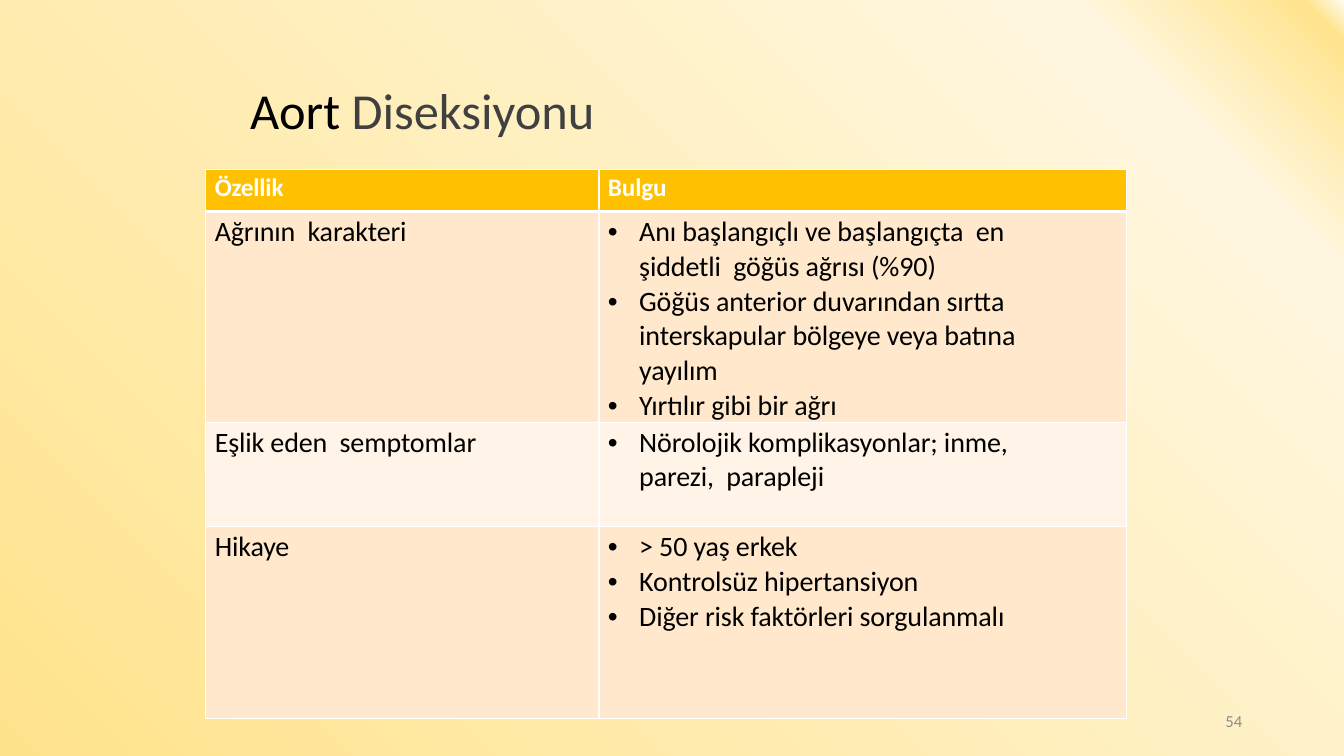
from lxml import etree
from pptx import Presentation
from pptx.dml.color import RGBColor
from pptx.enum.text import MSO_ANCHOR, PP_ALIGN
from pptx.oxml.ns import qn
from pptx.util import Inches, Pt

MIDDLE = MSO_ANCHOR.MIDDLE
LEFT, RIGHT = PP_ALIGN.LEFT, PP_ALIGN.RIGHT

FONT = "Calibri"
WHITE = RGBColor(0xFF, 0xFF, 0xFF)
BLACK = RGBColor(0x00, 0x00, 0x00)
CHARCOAL = RGBColor(0x40, 0x40, 0x40)
GRAY = RGBColor(0x8C, 0x8C, 0x8C)
AMBER = RGBColor(0xFF, 0xC0, 0x00)
PEACH = RGBColor(0xFF, 0xE8, 0xCC)
CREAM = RGBColor(0xFF, 0xF4, 0xE7)

# Position in percent and colour, from the top right to the bottom left
BACKGROUND_STOPS = [
    (0, RGBColor(0xFF, 0xFC, 0xF2)),
    (2, RGBColor(0xFF, 0xE3, 0x8C)),
    (13, RGBColor(0xFF, 0xF7, 0xDF)),
    (100, RGBColor(0xFF, 0xE3, 0x8C)),
]

HEADINGS = ["Özellik", "Bulgu"]
FINDINGS = [
    ("Ağrının  karakteri", [
        "Anı başlangıçlı ve başlangıçta  en şiddetli  göğüs ağrısı (%90)",
        "Göğüs anterior duvarından sırtta interskapular bölgeye veya batına yayılım",
        "Yırtılır gibi bir ağrı",
    ]),
    ("Eşlik eden  semptomlar", [
        "Nörolojik komplikasyonlar; inme, parezi,  parapleji",
    ]),
    ("Hikaye", [
        "> 50 yaş erkek",
        "Kontrolsüz hipertansiyon",
        "Diğer risk faktörleri sorgulanmalı",
    ]),
]
COLUMN_WIDTHS = [3.9, 5.23]
ROW_HEIGHTS = [0.42, 2.09, 1.03, 1.91]
HEADING_FORMAT = {"size": Pt(18), "bold": True}
BODY_FORMAT = {"size": Pt(20), "bold": False}


def set_all(target, values):
    for name, value in values.items():
        setattr(target, name, value)


def add_run(paragraph, text, color, values):
    run = paragraph.add_run()
    run.text = text
    set_all(run.font, {"name": FONT, **values})
    run.font.color.rgb = color
    return run


def paint_background(slide):
    fill = slide.background.fill
    fill.gradient()
    fill.gradient_angle = 225
    stops = next(slide.element.iter(qn("a:gsLst")))
    for stop in list(stops):
        stops.remove(stop)
    for percent, color in BACKGROUND_STOPS:
        stop = etree.SubElement(stops, qn("a:gs"), pos=str(percent * 1000))
        etree.SubElement(stop, qn("a:srgbClr"), val=str(color))


def add_title(slide):
    title = slide.shapes.title
    set_all(title, {"left": Inches(0.92), "top": Inches(0.4),
                    "width": Inches(11.5), "height": Inches(1.45)})
    set_all(title.text_frame, {"margin_left": Inches(1.56),
                               "vertical_anchor": MIDDLE})
    paragraph = title.text_frame.paragraphs[0]
    set_all(paragraph, {"alignment": LEFT, "line_spacing": 0.9})
    for text, color in [("Aort ", BLACK), ("Diseksiyonu", CHARCOAL)]:
        add_run(paragraph, text, color, {"size": Pt(36)})


def add_page_number(slide, number):
    box = slide.shapes.add_textbox(Inches(9.42), Inches(6.95), Inches(3), Inches(0.4))
    set_all(box.text_frame, {"word_wrap": True, "vertical_anchor": MIDDLE})
    paragraph = box.text_frame.paragraphs[0]
    paragraph.alignment = RIGHT
    add_run(paragraph, number, GRAY, {"size": Pt(12)})


def add_bullet(paragraph):
    properties = paragraph._p.get_or_add_pPr()
    properties.set("marL", str(Inches(0.31)))
    properties.set("indent", str(-Inches(0.31)))
    etree.SubElement(properties, qn("a:buFont"), typeface="Arial")
    etree.SubElement(properties, qn("a:buChar"), char="•")


def set_borders(cell, bottom_width):
    """White cell lines, which must come before the fill in the cell's XML."""
    properties = cell._tc.get_or_add_tcPr()
    widths = {"a:lnL": 1, "a:lnR": 1, "a:lnT": 1, "a:lnB": bottom_width}
    for tag, width in widths.items():
        line = etree.SubElement(properties, qn(tag), w=str(Pt(width)))
        solid = etree.SubElement(line, qn("a:solidFill"))
        etree.SubElement(solid, qn("a:srgbClr"), val=str(WHITE))


def fill_cell(cell, texts, fill, color, values, bulleted=False, bottom_width=1):
    set_borders(cell, bottom_width)
    cell.fill.solid()
    cell.fill.fore_color.rgb = fill
    set_all(cell, {"margin_left": Inches(0.09), "margin_top": Inches(0.03),
                   "margin_right": Inches(0.7 if bulleted else 0),
                   "margin_bottom": 0})
    frame = cell.text_frame
    for index, text in enumerate(texts):
        paragraph = frame.add_paragraph() if index else frame.paragraphs[0]
        set_all(paragraph, {"line_spacing": 1.01,
                            "space_before": Pt(0.3 if index else 2)})
        if bulleted:
            add_bullet(paragraph)
        run = add_run(paragraph, text, color, values)
        run.font._element.set("spc", "-10")


def add_findings_table(slide):
    table = slide.shapes.add_table(
        len(ROW_HEIGHTS), len(COLUMN_WIDTHS), Inches(2.04), Inches(1.68),
        Inches(sum(COLUMN_WIDTHS)), Inches(sum(ROW_HEIGHTS))).table
    for column, width in zip(table.columns, COLUMN_WIDTHS):
        column.width = Inches(width)
    for row, height in zip(table.rows, ROW_HEIGHTS):
        row.height = Inches(height)
    for index, heading in enumerate(HEADINGS):
        fill_cell(table.cell(0, index), [heading], AMBER, WHITE,
                  HEADING_FORMAT, bottom_width=3)
    for index, (feature, findings) in enumerate(FINDINGS, start=1):
        fill = PEACH if index % 2 else CREAM
        fill_cell(table.cell(index, 0), [feature], fill, BLACK, BODY_FORMAT)
        fill_cell(table.cell(index, 1), findings, fill, BLACK, BODY_FORMAT,
                  bulleted=True)


def main():
    presentation = Presentation()
    set_all(presentation, {"slide_width": Inches(13.33),
                           "slide_height": Inches(7.5)})
    slide = presentation.slides.add_slide(presentation.slide_layouts[5])
    paint_background(slide)
    add_page_number(slide, "54")
    add_title(slide)
    add_findings_table(slide)
    presentation.save("out.pptx")


if __name__ == "__main__":
    main()
